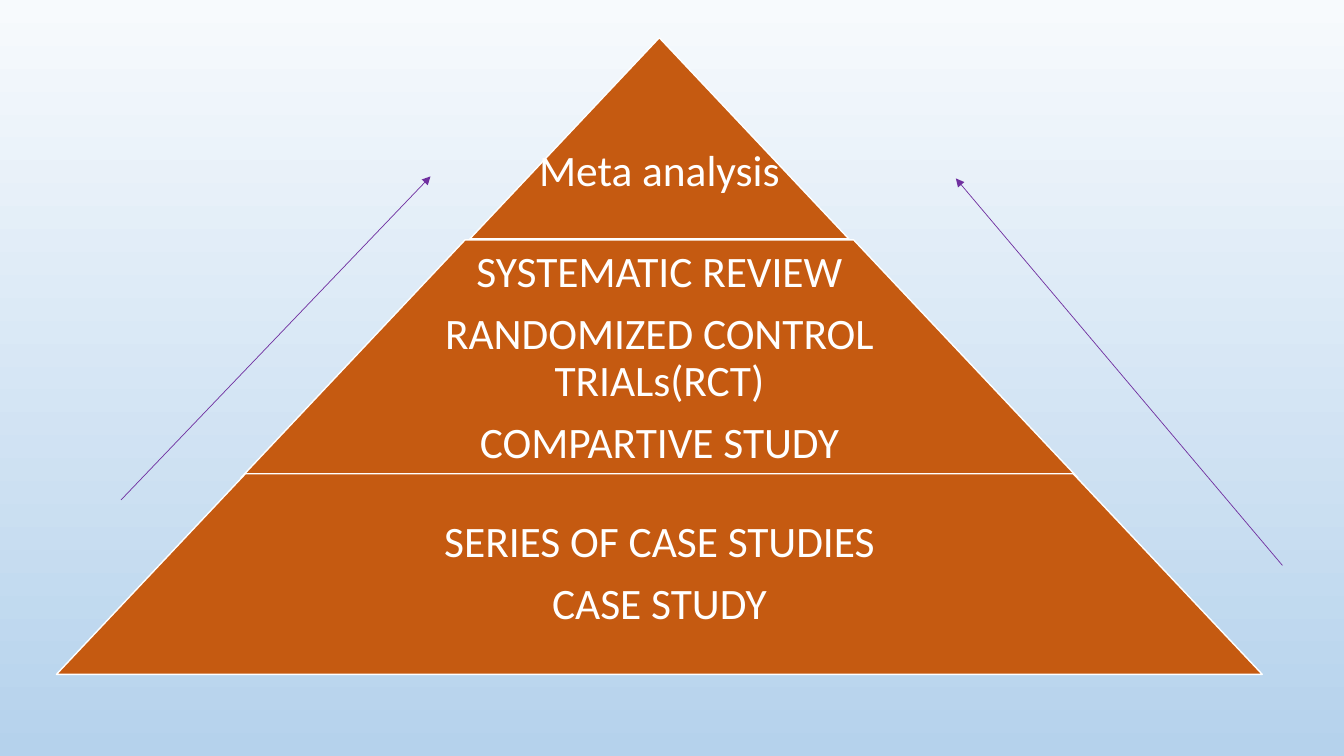
from lxml.etree import SubElement
from pptx import Presentation
from pptx.dml.color import RGBColor
from pptx.enum.shapes import MSO_CONNECTOR as Connector, MSO_SHAPE as Shape
from pptx.enum.text import MSO_ANCHOR as Anchor, PP_ALIGN as Align
from pptx.oxml.ns import qn
from pptx.util import Inches, Pt

SKY_TOP = RGBColor(0xF7, 0xFA, 0xFD)
SKY_BOTTOM = RGBColor(0xB5, 0xD2, 0xEC)
ORANGE = RGBColor(0xC5, 0x5A, 0x11)
WHITE = RGBColor(0xFF, 0xFF, 0xFF)
PURPLE = RGBColor(0x70, 0x30, 0xA0)

CENTER = 6.54
TIERS = [
    (0.38, 3.76, 1.99),
    (2.38, 8.3, 2.36),
    (4.7, 11.96, 1.99),
]
LABELS = [
    (1.05, 3.76, 1.32, ["Meta analysis"]),
    (2.38, 5.4, 2.36, ["SYSTEMATIC REVIEW", "RANDOMIZED CONTROL TRIALs(RCT)",
                       "COMPARTIVE STUDY"]),
    (4.7, 7.77, 1.99, ["SERIES OF CASE STUDIES", "CASE STUDY"]),
]
ARROWS = [((1.2, 4.96), (4.27, 1.75)), ((12.72, 5.61), (9.48, 1.77))]


class EvidencePyramid:
    """Draws the tiers, labels and arrows of an evidence pyramid on one slide."""

    font = "Calibri"
    size = 31
    slope = 0.942
    margin = Inches(0.04)

    def __init__(self, slide):
        self.slide = slide

    def background(self, top, bottom):
        fill = self.slide.background.fill
        fill.gradient()
        fill.gradient_angle = 270
        for stop, color in zip(fill.gradient_stops, (top, bottom)):
            stop.color.rgb = color

    def tier(self, top, width, height):
        tier = self.slide.shapes.add_shape(
            Shape.TRAPEZOID, Inches(CENTER - width / 2), Inches(top),
            Inches(width), Inches(height))
        tier.adjustments[0] = self.slope
        tier.shadow.inherit = False
        tier.fill.solid()
        tier.fill.fore_color.rgb = ORANGE
        tier.line.color.rgb = WHITE
        tier.line.width = Pt(1)

    def label(self, top, width, height, lines):
        box = self.slide.shapes.add_textbox(
            Inches(CENTER - width / 2), Inches(top), Inches(width), Inches(height))
        frame = box.text_frame
        frame.word_wrap = True
        frame.vertical_anchor = Anchor.MIDDLE
        frame.margin_left = frame.margin_right = self.margin
        frame.margin_top = frame.margin_bottom = self.margin
        frame.text = "\n".join(lines)
        for para in frame.paragraphs:
            para.alignment = Align.CENTER
            para.line_spacing = 0.9
            para.space_after = Pt(0.35 * self.size)
            for span in para.runs:
                span.font.name = self.font
                span.font.size = Pt(self.size)
                span.font.color.rgb = WHITE

    def arrow(self, start, end):
        arrow = self.slide.shapes.add_connector(
            Connector.STRAIGHT, *map(Inches, start + end))
        arrow.line.color.rgb = PURPLE
        arrow.line.width = Pt(0.5)
        SubElement(arrow.line._get_or_add_ln(), qn("a:tailEnd"), type="triangle")
        SubElement(arrow._element.spPr, qn("a:effectLst"))


def main():
    deck = Presentation()
    deck.slide_width, deck.slide_height = Inches(13.33), Inches(7.5)
    pyramid = EvidencePyramid(deck.slides.add_slide(deck.slide_layouts[6]))
    pyramid.background(SKY_TOP, SKY_BOTTOM)
    for tier, label in zip(TIERS, LABELS):
        pyramid.tier(*tier)
        pyramid.label(*label)
    for start, end in ARROWS:
        pyramid.arrow(start, end)
    deck.save("out.pptx")


if __name__ == "__main__":
    main()
